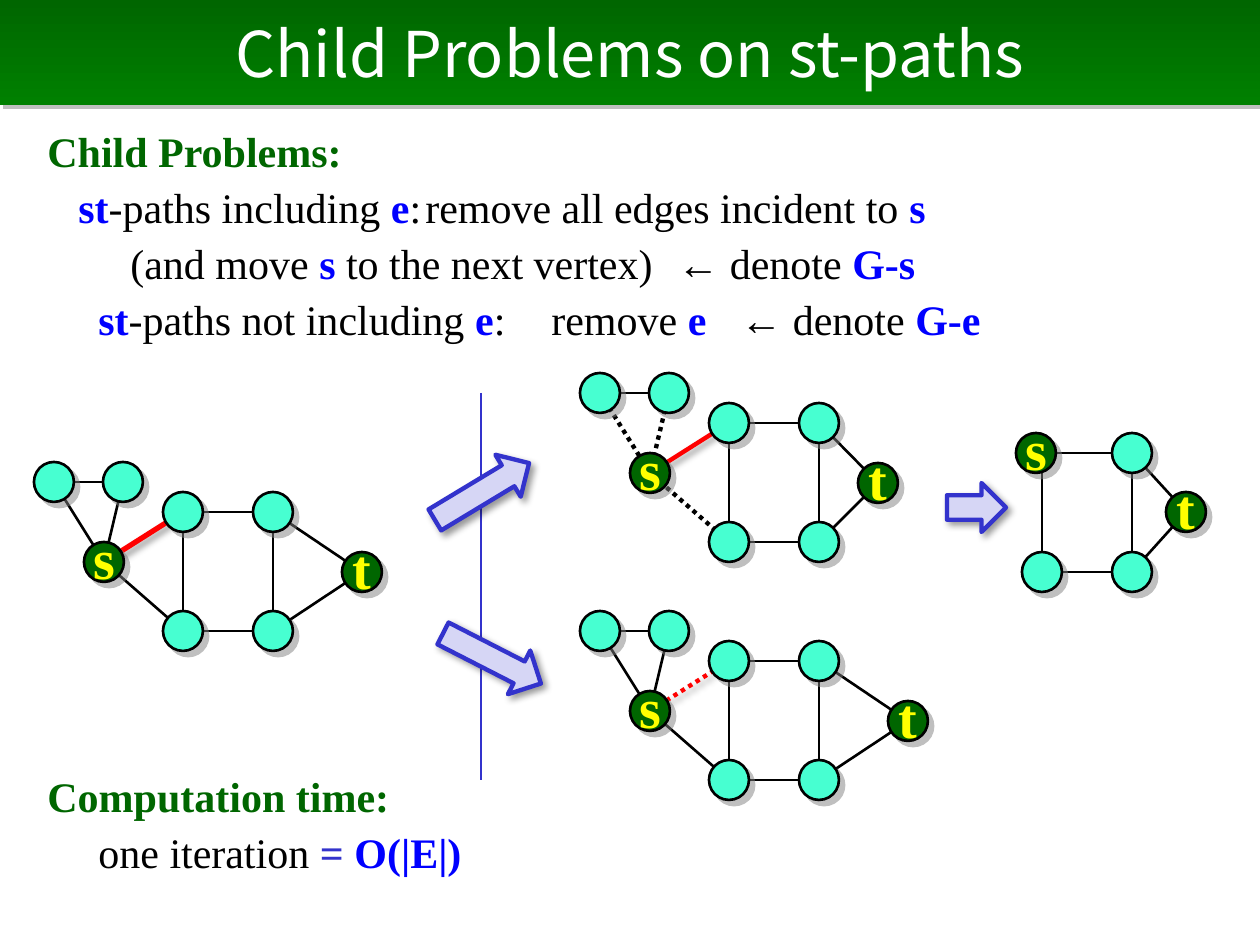
"""Build the slide on the child problems of st-path enumeration."""
from dataclasses import dataclass, field
from typing import Any

from lxml import etree
from pptx import Presentation
from pptx import util as u
from pptx.dml.color import RGBColor
from pptx.enum import dml, shapes, text
from pptx.oxml.ns import qn

SCALE = u.Inches(1) / 126
BLACK, WHITE, GREEN, RED = "000000", "FFFFFF", "006600", "FF0000"
BLUE, INDIGO, LAVENDER = "0000FF", "3333CC", "D6D6F5"
MINT, YELLOW = "47FFD1", "FFFF00"
SERIF, SANS = "Times New Roman", "Noto Sans CJK JP"
NODE_SIZE = 40
VERTICES = {"a": (0, 0), "b": (69, 0), "s": (50, 80), "u": (129, 30),
            "v": (219, 30), "l": (129, 149), "w": (219, 149), "t": (308, 90)}
ALL_EDGES = "ls bs us lu vu wl wv tv tw ba as"


@dataclass
class Shadow:
    color: str
    alpha: int
    blur: float
    distance: float


@dataclass
class EdgeStyle:
    color: str = BLACK
    width: float = 1.5
    dotted: bool = False


@dataclass
class Graph:
    x: int
    y: int
    styles: dict[str, EdgeStyle] = field(default_factory=dict)
    moved: dict[str, tuple[int, int]] = field(default_factory=dict)
    edges: str = ALL_EDGES
    nodes: str = "abslwvut"


@dataclass
class Arrow:
    x: int
    y: int
    width: int
    rotation: float = 0


@dataclass
class Line:
    runs: list[tuple[str, str]]
    indent: int = 0
    tabs: tuple[int, ...] = ()


SOFT = Shadow(BLACK, 40, 4, 3)
NODE_SHADOW = Shadow("808080", 50, 0, 4.2)
TITLE_SHADOW = Shadow("808080", 50, 0, 2.8)
REMOVED = EdgeStyle(width=2.5, dotted=True)

GRAPHS = [
    Graph(54, 482, {"us": EdgeStyle(RED, 3)}),
    Graph(600, 631, {"us": EdgeStyle(RED, 2.5, True)}),
    Graph(600, 393, {"us": EdgeStyle(RED, 2.5), "ls": REMOVED, "bs": REMOVED, "as": REMOVED},
          {"t": (278, 90)}),
    Graph(913, 423, moved={"s": (123, 30), "t": (273, 89)},
          edges="lu vu wl wv tv tw", nodes="slwvt"),
]
ARROWS = [Arrow(947, 483, 59), Arrow(437, 634, 110, 27.1), Arrow(427, 467, 110, 328.9)]
CHILD_LINES = [
    Line([("Child Problems:", GREEN)]),
    Line([("st", BLUE), ("-paths including ", BLACK), ("e", BLUE),
          (":\tremove all edges incident to ", BLACK), ("s", BLUE)], 31, (405,)),
    Line([("(and move ", BLACK), ("s", BLUE),
          (" to the next vertex)\t← denote ", BLACK), ("G-s", BLUE)], 83, (678,)),
    Line([("st", BLUE), ("-paths not including ", BLACK), ("e", BLUE), (":\tremove ", BLACK),
          ("e", BLUE), ("\t← denote ", BLACK), ("G-e", BLUE)], 51, (500, 718)),
]
TIME_LINES = [
    Line([("Computation time:", GREEN)]),
    Line([("one iteration ", BLACK), ("= ", INDIGO), ("O(|E|)", BLUE)], 51),
]


def px(value: float) -> int:
    """Turn pixels into EMU."""
    return round(value * SCALE)


def rgb(value: str) -> RGBColor:
    """Turn a hex string into a colour."""
    return RGBColor.from_string(value)


def set_shadow(shape: Any, shadow: Shadow | None = None) -> None:
    """Give a finished shape the shadow, or none at all."""
    properties = shape._element.spPr
    for old in properties.findall(qn("a:effectLst")):
        properties.remove(old)
    effects = etree.SubElement(properties, qn("a:effectLst"))
    if shadow:
        outer = etree.SubElement(effects, qn("a:outerShdw"), blurRad=str(u.Pt(shadow.blur)),
                                 dist=str(u.Pt(shadow.distance)), dir="2700000",
                                 algn="ctr", rotWithShape="0")
        color = etree.SubElement(outer, qn("a:srgbClr"), val=shadow.color)
        etree.SubElement(color, qn("a:alpha"), val=str(shadow.alpha * 1000))


def style_font(font: Any, name: str, size: int, color: str, bold: bool) -> None:
    """Set the look of a run."""
    font.name, font.size, font.bold = name, u.Pt(size), bold
    font.color.rgb = rgb(color)


def add_title(slide: Any, title: str) -> None:
    """Turn the title placeholder into the green banner."""
    shape = slide.shapes.title
    shape.left, shape.top, shape.width, shape.height = 0, 0, px(1260), px(105)
    shape.fill.gradient()
    shape.fill.gradient_angle = 270
    for stop, color, position in zip(shape.fill.gradient_stops, (GREEN, "008000"), (0, 1)):
        stop.color.rgb, stop.position = rgb(color), position
    set_shadow(shape, TITLE_SHADOW)
    frame = shape.text_frame
    frame.text = title
    frame.auto_size = text.MSO_AUTO_SIZE.NONE
    frame.vertical_anchor = text.MSO_ANCHOR.MIDDLE
    frame.paragraphs[0].alignment = text.PP_ALIGN.CENTER
    style_font(frame.paragraphs[0].runs[0].font, SANS, 36, WHITE, False)


def add_text(slide: Any, top: int, height: int, lines: list[Line]) -> None:
    """Add a block of lines whose coloured runs are bold."""
    frame = slide.shapes.add_textbox(px(35), px(top), px(1197), px(height)).text_frame
    frame.word_wrap = True
    for index, line in enumerate(lines):
        paragraph = frame.add_paragraph() if index else frame.paragraphs[0]
        paragraph.line_spacing, paragraph.space_before = 0.9, u.Pt(6)
        properties = paragraph._p.get_or_add_pPr()
        properties.set("marL", "0")
        properties.set("indent", str(px(line.indent)))
        if line.tabs:
            stops = etree.SubElement(properties, qn("a:tabLst"))
            for tab in line.tabs:
                etree.SubElement(stops, qn("a:tab"), pos=str(px(tab)), algn="l")
        for words, color in line.runs:
            run = paragraph.add_run()
            run.text = words
            style_font(run.font, SERIF, 24, color, color != BLACK)


def add_line(parent: Any, start: tuple[int, int], end: tuple[int, int], style: EdgeStyle) -> None:
    """Add a straight line; red ones cast a shadow."""
    line = parent.shapes.add_connector(shapes.MSO_CONNECTOR.STRAIGHT, *map(px, start + end))
    line.line.color.rgb, line.line.width = rgb(style.color), u.Pt(style.width)
    if style.dotted:
        line.line.dash_style = dml.MSO_LINE.ROUND_DOT
    set_shadow(line, SOFT if style.color == RED else None)


def add_node(parent: Any, name: str, center: tuple[int, int]) -> None:
    """Add a vertex, labelled when it is a terminal."""
    left, top = (px(value - NODE_SIZE / 2) for value in center)
    node = parent.shapes.add_shape(shapes.MSO_SHAPE.OVAL, left, top, px(NODE_SIZE), px(NODE_SIZE))
    terminal = name in "st"
    node.fill.solid()
    node.fill.fore_color.rgb = rgb(GREEN if terminal else MINT)
    node.line.color.rgb, node.line.width = rgb(BLACK), u.Pt(1.5)
    set_shadow(node, NODE_SHADOW)
    if terminal:
        frame = node.text_frame
        frame.text, frame.word_wrap = name, False
        frame.margin_left = frame.margin_right = frame.margin_top = 0
        frame.margin_bottom = px(10)
        frame.vertical_anchor = text.MSO_ANCHOR.MIDDLE
        frame.paragraphs[0].alignment = text.PP_ALIGN.CENTER
        style_font(frame.paragraphs[0].runs[0].font, SERIF, 32, YELLOW, True)


def add_graph(slide: Any, graph: Graph) -> None:
    """Add a grouped graph, edges below vertices."""
    group = slide.shapes.add_group_shape()
    places = {name: (graph.x + x, graph.y + y)
              for name, (x, y) in (VERTICES | graph.moved).items()}
    for edge in graph.edges.split():
        add_line(group, places[edge[0]], places[edge[1]], graph.styles.get(edge, EdgeStyle()))
    for name in graph.nodes:
        add_node(group, name, places[name])


def add_arrow(slide: Any, arrow: Arrow) -> None:
    """Add a block arrow."""
    shape = slide.shapes.add_shape(shapes.MSO_SHAPE.RIGHT_ARROW, px(arrow.x), px(arrow.y),
                                   px(arrow.width), px(49))
    shape.rotation = arrow.rotation
    shape.fill.solid()
    shape.fill.fore_color.rgb = rgb(LAVENDER)
    shape.line.color.rgb, shape.line.width = rgb(INDIGO), u.Pt(2.5)
    set_shadow(shape, SOFT)


def main() -> None:
    """Build and save the presentation."""
    presentation = Presentation()
    presentation.slide_width, presentation.slide_height = px(1260), px(945)
    slide = presentation.slides.add_slide(presentation.slide_layouts[5])
    add_title(slide, "Child Problems on st-paths")
    add_text(slide, 125, 225, CHILD_LINES)
    add_text(slide, 770, 120, TIME_LINES)
    for graph in GRAPHS:
        add_graph(slide, graph)
    add_line(slide, (481, 393), (481, 780), EdgeStyle(INDIGO, 1))
    for arrow in ARROWS:
        add_arrow(slide, arrow)
    presentation.save("out.pptx")


if __name__ == "__main__":
    main()
